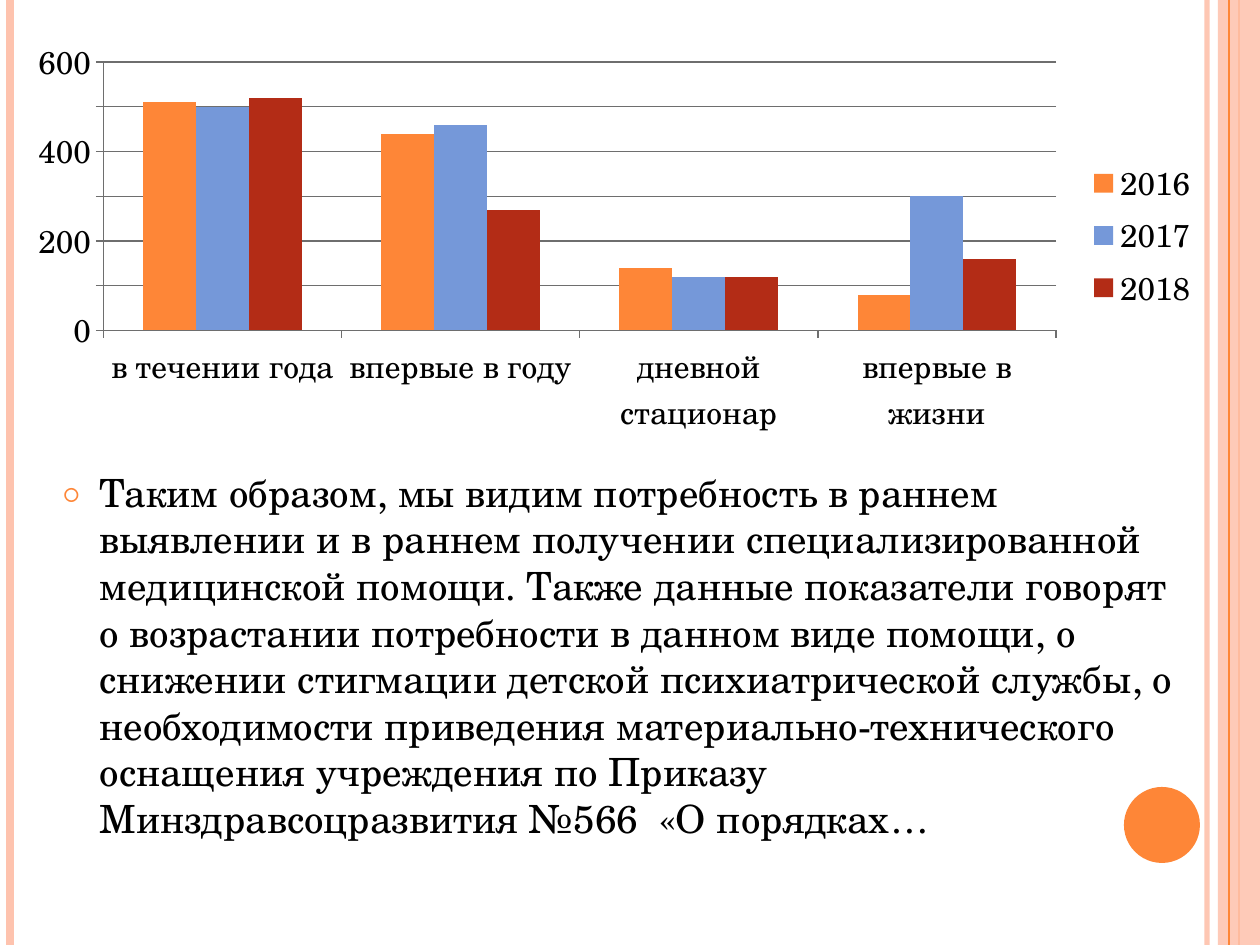
from lxml.etree import SubElement
from pptx import Presentation
from pptx.chart.data import CategoryChartData
from pptx.dml.color import RGBColor
from pptx.enum.chart import XL_CHART_TYPE, XL_LEGEND_POSITION, XL_TICK_MARK
from pptx.enum.shapes import MSO_CONNECTOR, MSO_SHAPE
from pptx.enum.text import MSO_ANCHOR, MSO_AUTO_SIZE, PP_ALIGN
from pptx.oxml.ns import qn
from pptx.util import Pt

SCALE = 914400 / 126
WIDE, HIGH = 1260, 945
FONT = "TeX Gyre Schola"
COLORS = {"pink": "FEC3AE", "orange": "FE8637", "blue": "7598D9",
          "red": "B32C16", "black": "000000", "grid": "6E6E6E"}

CATS = ["в течении года", "впервые в году", "дневной стационар", "впервые в жизни"]
YEARS = [("2016", (510, 440, 140, 80), "orange"),
         ("2017", (500, 460, 120, 300), "blue"),
         ("2018", (520, 270, 120, 160), "red")]
TEXT = ("Таким образом, мы видим потребность в раннем выявлении и в раннем "
        "получении специализированной медицинской помощи. Также данные "
        "показатели говорят о возрастании потребности в данном виде помощи, "
        "о снижении стигмации детской психиатрической службы, о необходимости "
        "приведения материально-технического оснащения учреждения по Приказу "
        "Минздравсоцразвития №566  «О порядках…")


def px(num):
    return round(num * SCALE)


def color(name):
    return RGBColor.from_string(COLORS[name])


def fade(part, pct):
    tint = part._element.spPr.find(".//" + qn("a:srgbClr"))
    SubElement(tint, qn("a:alpha"), val=str(pct * 1000))


def style(font, size):
    font.name, font.size = FONT, Pt(size)
    font.color.rgb = color("black")


def add_rule(slide, left, top, high, tone, width):
    rule = slide.shapes.add_connector(
        MSO_CONNECTOR.STRAIGHT, px(left), px(top), px(left), px(top + high))
    rule.line.color.rgb = color(tone)
    rule.line.width = Pt(width)
    SubElement(rule._element.spPr, qn("a:effectLst"))
    return rule


def add_solid(slide, kind, left, top, wide, high, tone):
    part = slide.shapes.add_shape(kind, px(left), px(top), px(wide), px(high))
    part.shadow.inherit = False
    part.fill.solid()
    part.fill.fore_color.rgb = color(tone)
    part.line.fill.background()
    return part


def add_frame(slide, left, top, wide, high):
    right = left + wide
    # Edge rules and the band on the right
    fade(add_rule(slide, right - 53, top, high, "pink", 3), 93)
    add_rule(slide, left + 10, top, high, "pink", 4.5)
    add_rule(slide, right - 21, top, high, "orange", 1.5)
    fade(add_solid(slide, MSO_SHAPE.RECTANGLE, right - 42, top, 42, high, "pink"), 87)
    add_rule(slide, right - 31, top, high, "orange", 0.75)
    # Corner disc
    add_solid(slide, MSO_SHAPE.OVAL, right - 136, top + high - 158, 76, 76, "orange")


def add_body(slide, left, top, wide, high):
    body = slide.placeholders[1]
    body.left, body.top, body.width, body.height = map(px, (left, top, wide, high))
    frame = body.text_frame
    frame.word_wrap = True
    frame.auto_size = MSO_AUTO_SIZE.NONE
    frame.vertical_anchor = MSO_ANCHOR.TOP
    para = frame.paragraphs[0]
    para.alignment = PP_ALIGN.LEFT
    para.space_before = Pt(6)
    run = para.add_run()
    run.text = TEXT
    style(run.font, 22.2)
    # Hanging bullet
    props = para._p.get_or_add_pPr()
    props.set("marL", str(px(38)))
    props.set("indent", str(px(-38)))
    tint = SubElement(props, qn("a:buClr"))
    SubElement(tint, qn("a:srgbClr"), val=COLORS["orange"])
    SubElement(props, qn("a:buSzPct"), val="70000")
    SubElement(props, qn("a:buFont"), typeface=FONT)
    SubElement(props, qn("a:buChar"), char="○")
    # Keep the text in front of the frame
    slide.shapes._spTree.append(body._element)


def set_plot(chart, left, top, wide, high):
    area = chart._chartSpace.chart.plotArea
    old = area.find(qn("c:layout"))
    if old is not None:
        area.remove(old)
    box = area.makeelement(qn("c:layout"))
    area.insert(0, box)
    spot = SubElement(box, qn("c:manualLayout"))
    for tag, val in (("layoutTarget", "inner"), ("xMode", "edge"), ("yMode", "edge"),
                     ("x", left), ("y", top), ("w", wide), ("h", high)):
        SubElement(spot, qn("c:" + tag), val=str(val))


def add_bars(slide, left, top, wide, high):
    data = CategoryChartData()
    data.categories = CATS
    for name, vals, _ in YEARS:
        data.add_series(name, vals)
    chart = slide.shapes.add_chart(
        XL_CHART_TYPE.COLUMN_CLUSTERED, *map(px, (left, top, wide, high)), data).chart
    style(chart.font, 18)
    chart.has_title = False
    chart.has_legend = True
    chart.legend.position = XL_LEGEND_POSITION.RIGHT
    chart.legend.include_in_layout = False
    # Columns
    plot = chart.plots[0]
    plot.vary_by_categories = False
    plot.gap_width, plot.overlap = 150, 0
    for bars, (_, _, tone) in zip(plot.series, YEARS):
        bars.format.fill.solid()
        bars.format.fill.fore_color.rgb = color(tone)
    # Axes
    axis = chart.value_axis
    axis.minimum_scale, axis.maximum_scale, axis.major_unit = 0, 600, 100
    axis.has_major_gridlines = True
    for line in (axis.major_gridlines.format.line, axis.format.line,
                 chart.category_axis.format.line):
        line.color.rgb = color("grid")
        line.width = Pt(0.75)
    for each in (axis, chart.category_axis):
        each.major_tick_mark = XL_TICK_MARK.OUTSIDE
    set_plot(chart, 0.07, 0.08, 0.8, 0.65)


def main():
    deck = Presentation()
    deck.slide_width, deck.slide_height = px(WIDE), px(HIGH)
    slide = deck.slides.add_slide(deck.slide_layouts[1])
    title = slide.shapes.title._element
    title.getparent().remove(title)
    add_frame(slide, 0, 0, WIDE, HIGH)
    add_body(slide, 49, 462, 1148, 407)
    add_bars(slide, 20, 29, 1191, 413)
    deck.save("out.pptx")


if __name__ == "__main__":
    main()
